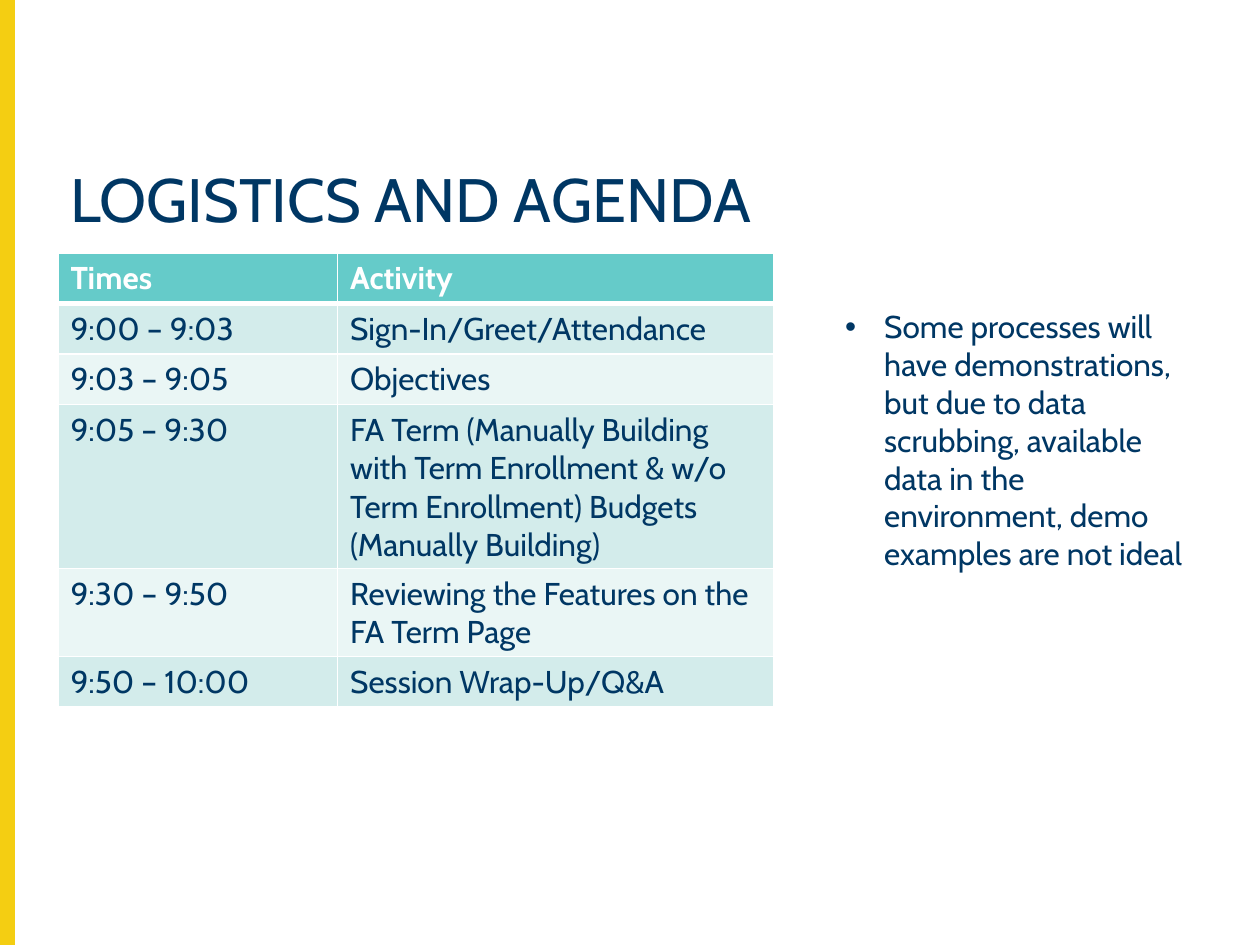
from dataclasses import dataclass

from lxml import etree
from pptx import Presentation
from pptx.dml.color import RGBColor
from pptx.enum.shapes import MSO_SHAPE
from pptx.oxml.ns import qn
from pptx.slide import Slide
from pptx.table import _Cell
from pptx.text.text import TextFrame, _Paragraph
from pptx.util import Inches, Pt

RECT = MSO_SHAPE.RECTANGLE


@dataclass(frozen=True)
class Theme:
    font: str = "Cabin"
    navy: str = "003764"
    white: str = "FFFFFF"
    gold: str = "F4CE12"
    teal: str = "65CBC9"
    bands: tuple[str, str] = ("D3ECEB", "EAF6F5")
    title: float = 35
    body: float = 18
    rule: float = 1
    thick: float = 3


@dataclass(frozen=True)
class Box:
    left: float
    top: float
    width: float
    height: float

    def place(self) -> tuple[int, ...]:
        return tuple(map(Inches, (self.left, self.top, self.width, self.height)))


@dataclass(frozen=True)
class Entry:
    time: str
    topic: str


THEME = Theme()
HEAD = Entry("Times", "Activity")
AGENDA = (
    Entry("9:00 – 9:03", "Sign-In/Greet/Attendance"),
    Entry("9:03 – 9:05", "Objectives"),
    Entry("9:05 – 9:30", "FA Term (Manually Building with Term Enrollment & w/o "
          "Term Enrollment) Budgets (Manually Building)"),
    Entry("9:30 – 9:50", "Reviewing the Features on the FA Term Page"),
    Entry("9:50 – 10:00", "Session Wrap-Up/Q&A"),
)
NOTE = ("Some processes will have demonstrations, but due to data scrubbing, "
        "available data in the environment, demo examples are not ideal")
WIDTHS = (2.22, 3.46)
ROW = 0.37


def write(frame: TextFrame, text: str, size: float,
          color: str = THEME.navy, bold: bool = False) -> _Paragraph:
    frame.text = text
    para = frame.paragraphs[0]
    font = para.runs[0].font
    font.name, font.size, font.bold = THEME.font, Pt(size), bold
    font.color.rgb = RGBColor.from_string(color)
    return para


def add_text(slide: Slide, box: Box, text: str, size: float) -> _Paragraph:
    frame = slide.shapes.add_textbox(*box.place()).text_frame
    frame.word_wrap = True
    return write(frame, text, size)


def add_bar(slide: Slide, box: Box) -> None:
    bar = slide.shapes.add_shape(RECT, *box.place())
    bar.shadow.inherit = False
    gold = RGBColor.from_string(THEME.gold)
    bar.fill.solid()
    bar.fill.fore_color.rgb = gold
    bar.line.color.rgb = gold
    bar.line.width = Pt(1)


def add_rules(cell: _Cell, top: float, bottom: float) -> None:
    props = cell._tc.get_or_add_tcPr()
    sides = {"L": THEME.rule, "R": THEME.rule, "T": top, "B": bottom}
    for side, width in sides.items():
        line = etree.SubElement(props, qn(f"a:ln{side}"), w=str(Pt(width)))
        fill = etree.SubElement(line, qn("a:solidFill"))
        etree.SubElement(fill, qn("a:srgbClr"), val=THEME.white)


def add_agenda(slide: Slide, left: float, top: float) -> None:
    rows = (HEAD, *AGENDA)
    box = Box(left, top, sum(WIDTHS), ROW * len(rows))
    table = slide.shapes.add_table(len(rows), len(WIDTHS), *box.place()).table
    for col, width in zip(table.columns, WIDTHS):
        col.width = Inches(width)
    for i, entry in enumerate(rows):
        table.rows[i].height = Inches(ROW)
        head = i == 0
        shade = THEME.teal if head else THEME.bands[(i - 1) % 2]
        ink = THEME.white if head else THEME.navy
        for j, text in enumerate((entry.time, entry.topic)):
            cell = table.cell(i, j)
            # Rules come before the fill in the cell properties
            add_rules(cell, THEME.thick if i == 1 else THEME.rule,
                      THEME.thick if head else THEME.rule)
            cell.fill.solid()
            cell.fill.fore_color.rgb = RGBColor.from_string(shade)
            write(cell.text_frame, text, THEME.body, ink, head)


def add_bullet(para: _Paragraph, indent: float) -> None:
    props = para._p.get_or_add_pPr()
    props.set("marL", str(Inches(indent)))
    props.set("indent", str(-Inches(indent)))
    etree.SubElement(props, qn("a:buFont"), typeface="Arial")
    etree.SubElement(props, qn("a:buChar"), char="•")


def main() -> None:
    deck = Presentation()
    deck.slide_width, deck.slide_height = Inches(10), Inches(7.5)
    slide = deck.slides.add_slide(deck.slide_layouts[6])

    # Side bar and title
    add_bar(slide, Box(0, 0, 0.11, 7.5))
    title = add_text(slide, Box(0.46, 1.3, 9.33, 0.79),
                     "LOGISTICS AND AGENDA", THEME.title)
    title.line_spacing = 0.9

    # Agenda table and side note
    add_agenda(slide, 0.46, 2.01)
    note = add_text(slide, Box(6.61, 2.39, 3.04, 2.22), NOTE, THEME.body)
    add_bullet(note, 0.31)

    deck.save("out.pptx")


if __name__ == "__main__":
    main()
